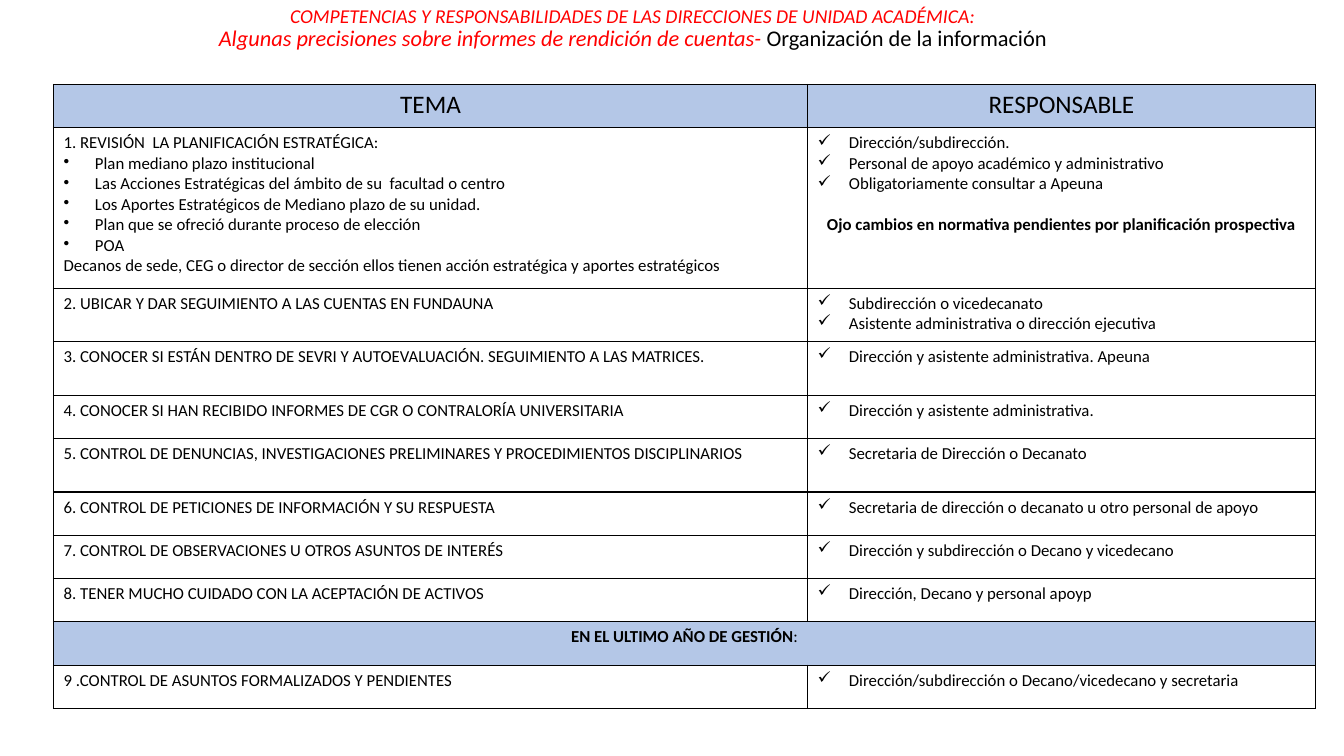
from dataclasses import dataclass

from lxml.etree import SubElement
from pptx import Presentation
from pptx.dml.color import RGBColor
from pptx.enum.text import MSO_ANCHOR, MSO_AUTO_SIZE, PP_ALIGN
from pptx.oxml.ns import qn
from pptx.util import Cm, Pt


@dataclass(frozen=True)
class Theme:
    font: str = "Calibri"
    red: RGBColor = RGBColor(0xFF, 0x00, 0x00)
    black: RGBColor = RGBColor(0x00, 0x00, 0x00)
    white: RGBColor = RGBColor(0xFF, 0xFF, 0xFF)
    band: RGBColor = RGBColor(0xB4, 0xC7, 0xE7)
    title_top: int = 14
    title_bottom: int = 16
    header: int = 18
    body: int = 12
    border: int = 1


theme = Theme()
BULLETS = "•✓"
HEADER_ROW, SECTION_ROW = 0, 9
NOTE = "Ojo cambios en normativa pendientes por planificación prospectiva"
SHORT, MEDIUM, TALL = 1.09, 1.35, 4.04

# Row height in cm, lines of the topic, lines of the person in charge
rows = [
    (SHORT, ["TEMA"], ["RESPONSABLE"]),
    (TALL,
     ["1. REVISIÓN  LA PLANIFICACIÓN ESTRATÉGICA:",
      "•Plan mediano plazo institucional",
      "•Las Acciones Estratégicas del ámbito de su  facultad o centro",
      "•Los Aportes Estratégicos de Mediano plazo de su unidad.",
      "•Plan que se ofreció durante proceso de elección",
      "•POA",
      "Decanos de sede, CEG o director de sección ellos tienen acción estratégica y aportes estratégicos"],
     ["✓Dirección/subdirección.",
      "✓Personal de apoyo académico y administrativo",
      "✓Obligatoriamente consultar a Apeuna",
      NOTE]),
    (MEDIUM, ["2. UBICAR Y DAR SEGUIMIENTO A LAS CUENTAS EN FUNDAUNA"],
     ["✓Subdirección o vicedecanato", "✓Asistente administrativa o dirección ejecutiva"]),
    (MEDIUM, ["3. CONOCER SI ESTÁN DENTRO DE SEVRI Y AUTOEVALUACIÓN. SEGUIMIENTO A LAS MATRICES."],
     ["✓Dirección y asistente administrativa. Apeuna"]),
    (SHORT, ["4. CONOCER SI HAN RECIBIDO INFORMES DE CGR O CONTRALORÍA UNIVERSITARIA"],
     ["✓Dirección y asistente administrativa."]),
    (MEDIUM, ["5. CONTROL DE DENUNCIAS, INVESTIGACIONES PRELIMINARES Y PROCEDIMIENTOS DISCIPLINARIOS"],
     ["✓Secretaria de Dirección o Decanato"]),
    (SHORT, ["6. CONTROL DE PETICIONES DE INFORMACIÓN Y SU RESPUESTA"],
     ["✓Secretaria de dirección o decanato u otro personal de apoyo"]),
    (SHORT, ["7. CONTROL DE OBSERVACIONES U OTROS ASUNTOS DE INTERÉS"],
     ["✓Dirección y subdirección o Decano y vicedecano"]),
    (SHORT, ["8. TENER MUCHO CUIDADO CON LA ACEPTACIÓN DE ACTIVOS"],
     ["✓Dirección, Decano y personal apoyp"]),
    (SHORT, ["EN EL ULTIMO AÑO DE GESTIÓN"], []),
    (SHORT, ["9 .CONTROL DE ASUNTOS FORMALIZADOS Y PENDIENTES"],
     ["✓Dirección/subdirección o Decano/vicedecano y secretaria"]),
]


def format_run(run, size, color=theme.black, bold=False, italic=False):
    font = run.font
    font.name, font.size, font.bold, font.italic = theme.font, Pt(size), bold, italic
    font.color.rgb = color


def add_borders(cell):
    properties = cell._tc.get_or_add_tcPr()
    for side in ("lnL", "lnR", "lnT", "lnB"):
        line = SubElement(properties, qn(f"a:{side}"), w=str(Pt(theme.border)))
        fill = SubElement(line, qn("a:solidFill"))
        SubElement(fill, qn("a:srgbClr"), val=str(theme.black))


presentation = Presentation()
presentation.slide_width, presentation.slide_height = Cm(33.87), Cm(19.05)
slide = presentation.slides.add_slide(presentation.slide_layouts[5])

# Title
title = slide.shapes.title
title.left, title.top, title.width, title.height = Cm(1.35), Cm(0.28), Cm(29.2), Cm(0.9)
frame = title.text_frame
frame.word_wrap = True
frame.auto_size = MSO_AUTO_SIZE.NONE
frame.vertical_anchor = MSO_ANCHOR.MIDDLE
paragraph = frame.paragraphs[0]
paragraph.text = ("COMPETENCIAS Y RESPONSABILIDADES DE LAS DIRECCIONES DE UNIDAD ACADÉMICA:\v"
                  "Algunas precisiones sobre informes de rendición de cuentas- ")
paragraph.alignment = PP_ALIGN.CENTER
paragraph.line_spacing = 0.9
paragraph.add_run().text = "Organización de la información"
heading, subheading, subject = paragraph.runs
format_run(heading, theme.title_top, theme.red, italic=True)
format_run(subheading, theme.title_bottom, theme.red, italic=True)
format_run(subject, theme.title_bottom)

# Table grid
table_height = sum(height for height, _, _ in rows)
table = slide.shapes.add_table(len(rows), 2, Cm(1.35), Cm(2.13), Cm(31.8), Cm(table_height)).table
table.first_row = table.horz_banding = False
table.columns[0].width, table.columns[1].width = Cm(19), Cm(12.8)
table.cell(SECTION_ROW, 0).merge(table.cell(SECTION_ROW, 1))

# Cells
for row_index, (height, *columns) in enumerate(rows):
    table.rows[row_index].height = Cm(height)
    is_band = row_index in (HEADER_ROW, SECTION_ROW)
    size = theme.header if row_index == HEADER_ROW else theme.body
    for column_index, lines in enumerate(columns):
        cell = table.cell(row_index, column_index)
        add_borders(cell)
        cell.fill.solid()
        cell.fill.fore_color.rgb = theme.band if is_band else theme.white
        cell.text_frame.text = "\n".join(line.lstrip(BULLETS) for line in lines)
        for line, paragraph in zip(lines, cell.text_frame.paragraphs):
            if line[0] in BULLETS:
                properties = paragraph._p.get_or_add_pPr()
                properties.set("marL", str(Cm(0.79)))
                properties.set("indent", str(-Cm(0.79)))
                SubElement(properties, qn("a:buChar"), char=line[0])
            if is_band or line == NOTE:
                paragraph.alignment = PP_ALIGN.CENTER
            if line == NOTE:
                paragraph.space_before = Pt(14.6)
            format_run(paragraph.runs[0], size, bold=row_index == SECTION_ROW or line == NOTE)

# Colon after the section heading, in regular weight
colon = table.cell(SECTION_ROW, 0).text_frame.paragraphs[0].add_run()
colon.text = ":"
format_run(colon, theme.body)

presentation.save("out.pptx")
